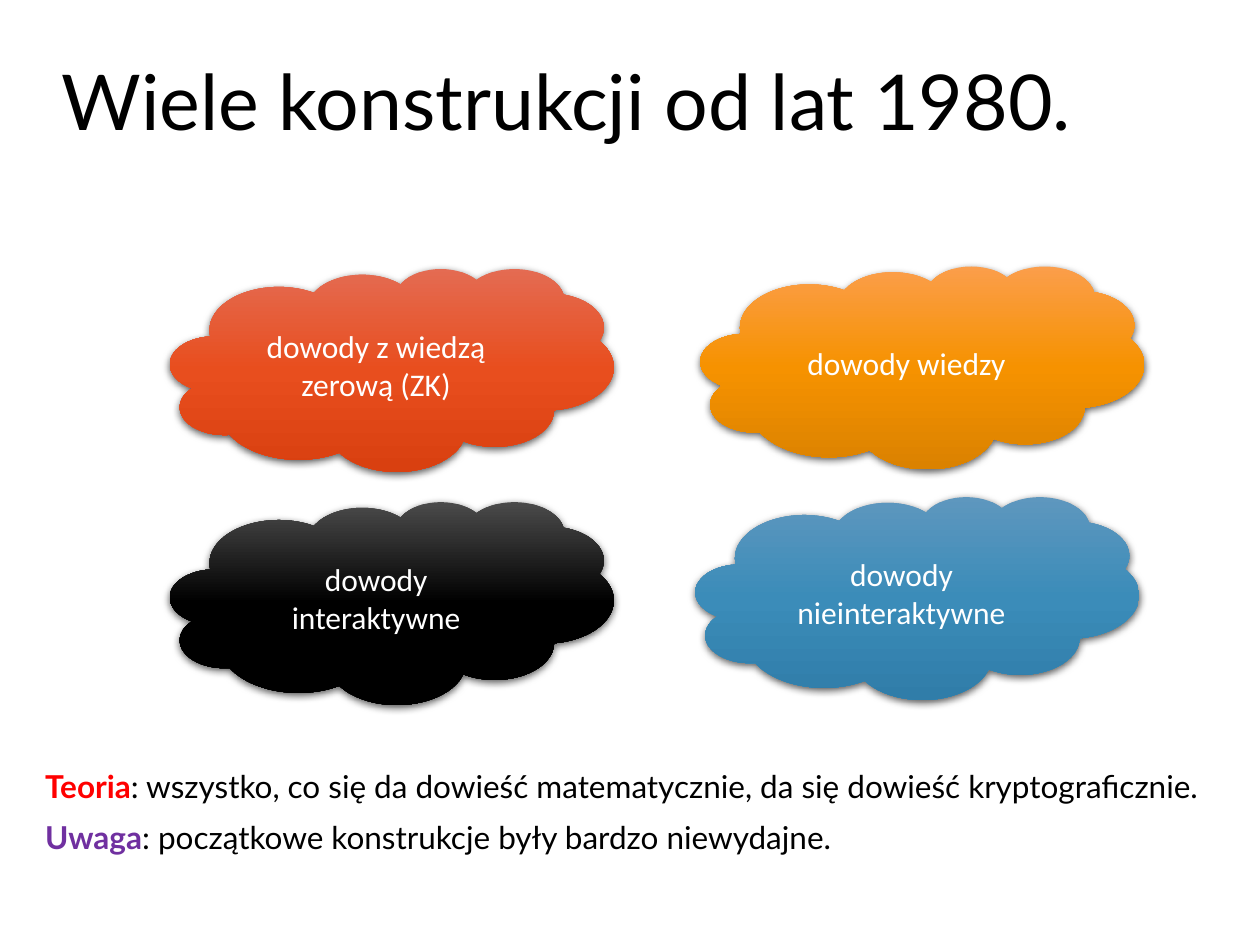
from dataclasses import dataclass

from lxml import etree
from pptx import Presentation
from pptx.dml.color import RGBColor
from pptx.enum.shapes import MSO_SHAPE
from pptx.enum.text import MSO_ANCHOR, PP_ALIGN
from pptx.oxml.ns import qn
from pptx.util import Pt

CLOUD = MSO_SHAPE.CLOUD
MIDDLE, TOP = MSO_ANCHOR.MIDDLE, MSO_ANCHOR.TOP
CENTER = PP_ALIGN.CENTER


@dataclass(frozen=True)
class Theme:
    text_font: str = "Lato"
    cloud_font: str = "Calibri"
    title_size: int = 44
    body_size: int = 18
    ink: str = "000000"
    white: str = "FFFFFF"
    theory: str = "FF0000"
    remark: str = "7030A0"
    red: tuple = ("E46B52", "E84E1E", "D94010")
    orange: tuple = ("FB9E4B", "F69200", "DB8200")
    black: tuple = ("4B4B4B", "000000", "000000")
    blue: tuple = ("5E97BE", "3B8CB9", "307DA9")


THEME = Theme()
CLOUD_SIZE = (253.44, 115.92)
CLOUDS = [
    ("dowody z wiedzą zerową (ZK)", (97.2, 153.36), THEME.red),
    ("dowody wiedzy", (400.32, 151.92), THEME.orange),
    ("dowody interaktywne", (97.2, 286.56), THEME.black),
    ("dowody nieinteraktywne", (397.44, 283.68), THEME.blue),
]
REMARKS = [
    ("Teoria", THEME.theory,
     ": wszystko, co się da dowieść matematycznie, da się dowieść kryptograficznie."),
    ("Uwaga", THEME.remark, ": początkowe konstrukcje były bardzo niewydajne."),
]


def add_span(para, text, color, size=THEME.body_size, name=THEME.text_font, bold=False):
    span = para.add_run()
    span.text = text
    for key, value in dict(size=Pt(size), name=name, bold=bold).items():
        setattr(span.font, key, value)
    span.font.color.rgb = RGBColor.from_string(color)


def add_text_frame(page, box, anchor):
    frame = page.shapes.add_textbox(*map(Pt, box)).text_frame
    frame.word_wrap = True
    frame.vertical_anchor = anchor
    return frame


def add_color(parent, color):
    return etree.SubElement(parent, qn("a:srgbClr"), val=color)


def add_gradient(shape, colors):
    """Fill from top to bottom with evenly spaced colours."""
    gradient = etree.SubElement(shape.element.spPr, qn("a:gradFill"), rotWithShape="1")
    stops = etree.SubElement(gradient, qn("a:gsLst"))
    for index, color in enumerate(colors):
        position = 100000 * index // (len(colors) - 1)
        add_color(etree.SubElement(stops, qn("a:gs"), pos=str(position)), color)
    etree.SubElement(gradient, qn("a:lin"), ang="5400000", scaled="0")


def add_drop_shadow(shape):
    shape.shadow.inherit = False
    effects = shape.element.spPr.find(qn("a:effectLst"))
    shadow = etree.SubElement(effects, qn("a:outerShdw"), blurRad=str(Pt(4.5)),
                              dist=str(Pt(1.5)), dir="5400000", algn="ctr",
                              rotWithShape="0")
    etree.SubElement(add_color(shadow, THEME.ink), qn("a:alpha"), val="63000")


def add_title(page, box):
    para = add_text_frame(page, box, MIDDLE).paragraphs[0]
    para.line_spacing = 0.9
    add_span(para, "Wiele konstrukcji od lat 1980.", THEME.ink, THEME.title_size)


def add_cloud(page, box, text, colors):
    cloud = page.shapes.add_shape(CLOUD, *map(Pt, box))
    add_gradient(cloud, colors)
    cloud.line.fill.background()
    add_drop_shadow(cloud)
    frame = cloud.text_frame
    frame.word_wrap = True
    frame.vertical_anchor = MIDDLE
    para = frame.paragraphs[0]
    para.alignment = CENTER
    add_span(para, text, THEME.white, name=THEME.cloud_font)


def add_remarks(page, box):
    frame = add_text_frame(page, box, TOP)
    for index, (label, color, text) in enumerate(REMARKS):
        para = frame.add_paragraph() if index else frame.paragraphs[0]
        para.line_spacing = 0.9
        para.space_before = Pt(10 if index else 0)
        add_span(para, label, color, bold=True)
        add_span(para, text, THEME.ink)


def main():
    deck = Presentation()
    deck.slide_width, deck.slide_height = Pt(720), Pt(540)
    page = deck.slides.add_slide(deck.slide_layouts[6])
    add_title(page, (28.08, 28.8, 642.24, 62.64))
    for text, corner, colors in CLOUDS:
        add_cloud(page, corner + CLOUD_SIZE, text, colors)
    add_remarks(page, (18.72, 437.04, 691.92, 82.8))
    deck.save("out.pptx")


if __name__ == "__main__":
    main()
